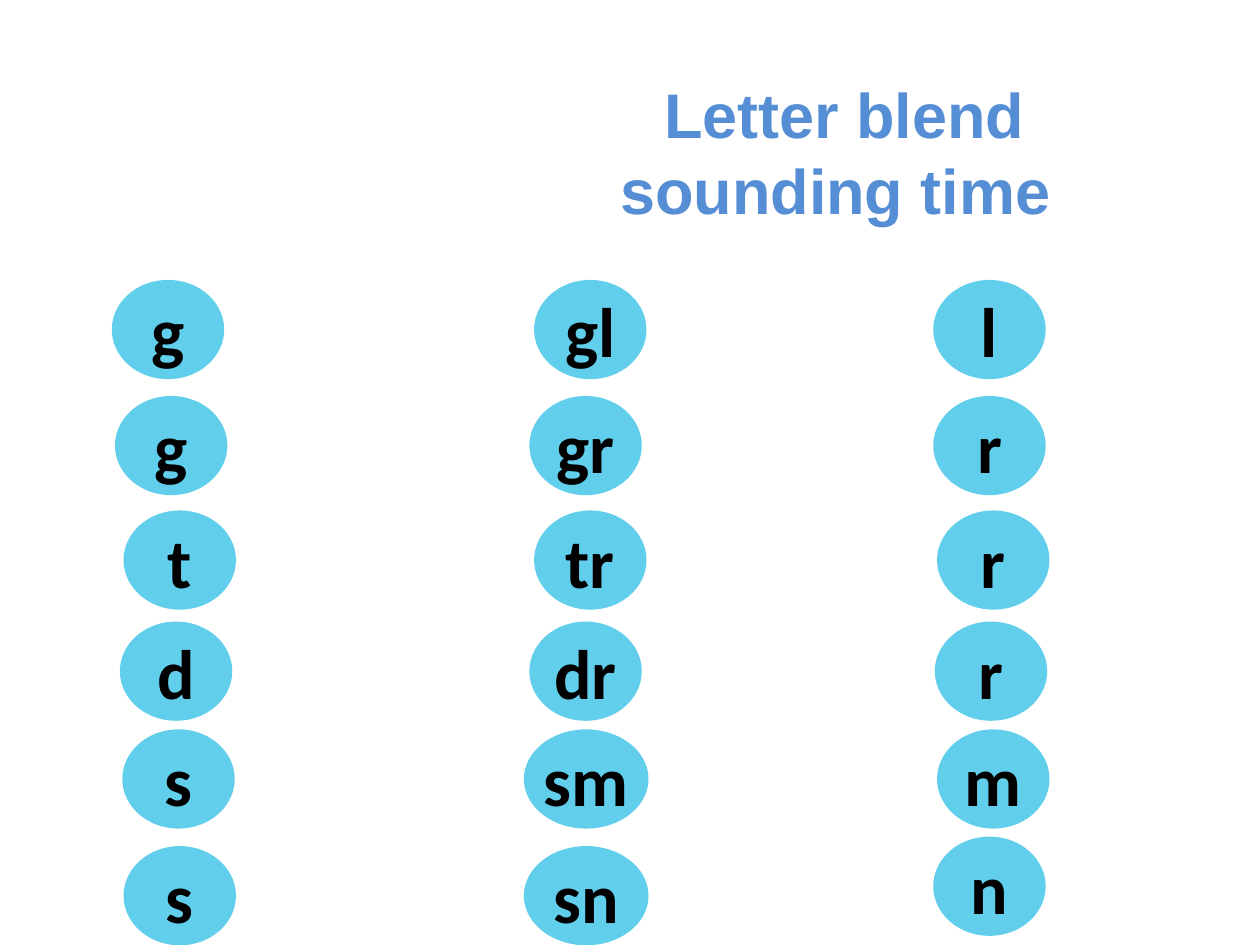
from pptx import Presentation
from pptx.dml.color import RGBColor
from pptx.enum import shapes, text
from pptx.util import Pt

DISC_W, WIDE_W, DISC_H = 64.2, 71.2, 56.7
ROWS = [
    (0, [(0, "g"), (469.4, "l"), (241.3, "gl")]),
    (66.3, [(1.8, "g"), (469.4, "r"), (238.6, "gr")]),
    (131.7, [(6.7, "t"), (471.6, "r"), (241.3, "tr")]),
    (195.2, [(4.6, "d"), (470.3, "r"), (238.6, "dr")]),
    (256.8, [(6, "s"), (471.6, "m"), (235.5, "sm")]),
    (323.5, [(6.7, "s"), (469.4, "n"), (235.5, "sn")]),
]
WIDE = {"sm", "sn"}
LIFTED = {"n": 5.4}


def color(value):
    """Return the colour for a hex string."""
    return RGBColor.from_string(value)


def write(tf, words, font, size, fill, bold=True):
    """Fill a text frame with one centred, formatted paragraph."""
    tf.word_wrap = True
    p = tf.paragraphs[0]
    p.alignment = text.PP_ALIGN.CENTER
    r = p.add_run()
    r.text = words
    r.font.name, r.font.size, r.font.bold = font, Pt(size), bold
    r.font.color.rgb = color(fill)


def add_title(slide, left, top, width, height):
    """Place the heading in its box."""
    sp = slide.shapes.add_textbox(Pt(left), Pt(top), Pt(width), Pt(height))
    write(sp.text_frame, " Letter blend sounding time", "Arial", 36, "558ED5")
    sp.text_frame.auto_size = text.MSO_AUTO_SIZE.SHAPE_TO_FIT_TEXT


def add_disc(slide, left, top, width, letters):
    """Place one disc with its letters."""
    sp = slide.shapes.add_shape(shapes.MSO_SHAPE.OVAL, Pt(left), Pt(top), Pt(width), Pt(DISC_H))
    sp.shadow.inherit = False
    sp.fill.solid()
    sp.fill.fore_color.rgb = color("61CFEB")
    sp.line.fill.background()
    tf = sp.text_frame
    tf.margin_left = tf.margin_right = tf.margin_top = tf.margin_bottom = 0
    tf.vertical_anchor = text.MSO_ANCHOR.MIDDLE
    write(tf, letters, "Calibri", 40, "000000")


def add_blends(slide, left, top):
    """Place the rows of letters and blends."""
    for y, discs in ROWS:
        for x, letters in discs:
            width = WIDE_W if letters in WIDE else DISC_W
            add_disc(slide, left + x, top + y - LIFTED.get(letters, 0), width, letters)


def main():
    """Build and save the slide."""
    prs = Presentation()
    prs.slide_width, prs.slide_height = Pt(720), Pt(540)
    slide = prs.slides.add_slide(prs.slide_layouts[6])
    add_title(slide, 282, 39.6, 391, 94.3)
    add_blends(slide, 63.9, 160)
    prs.save("out.pptx")


if __name__ == "__main__":
    main()
